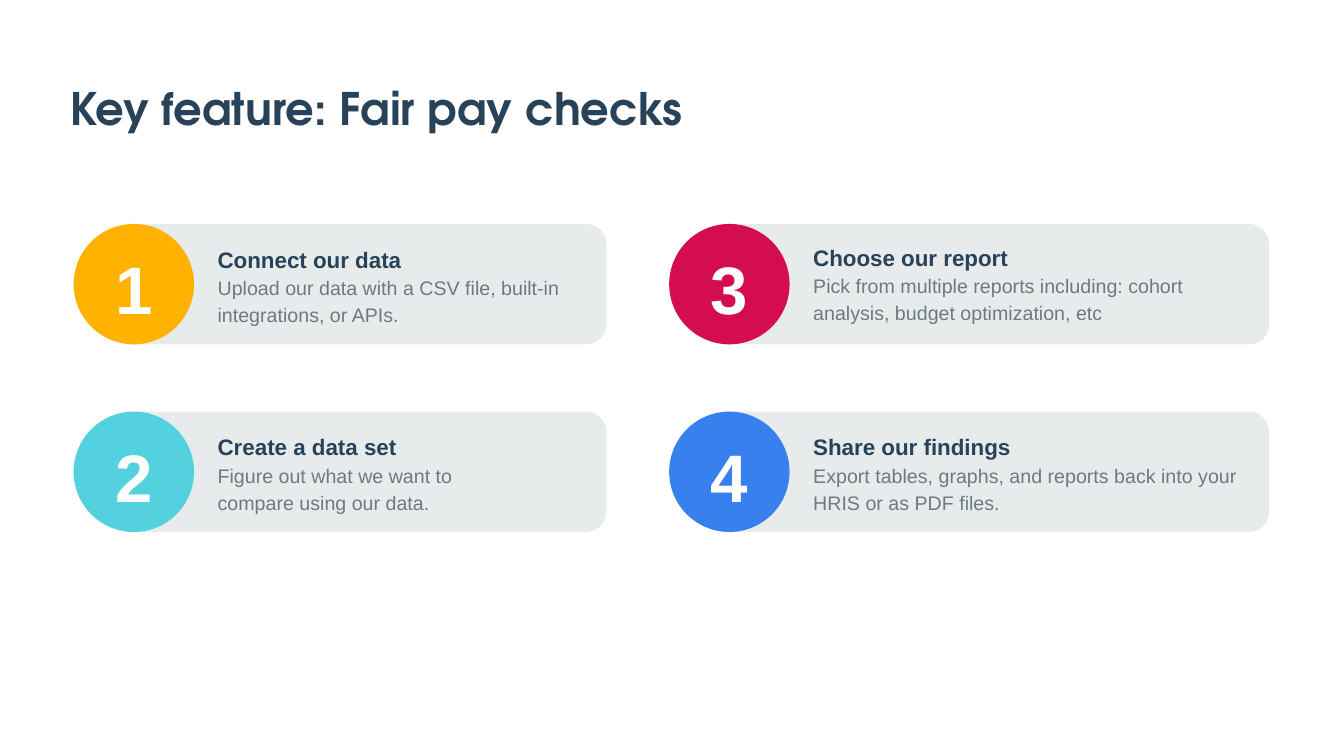
from lxml.etree import SubElement
from pptx import Presentation
from pptx.dml.color import RGBColor
from pptx.enum.shapes import MSO_SHAPE as Shape
from pptx.enum.text import MSO_ANCHOR as Anchor, PP_ALIGN as Align
from pptx.oxml.ns import qn
from pptx.util import Pt

COLORS = {
    "navy": "284359", "slate": "6C7B82", "mist": "D3D8DA", "white": "FFFFFF",
    "amber": "FFB200", "aqua": "53D1DE", "crimson": "D40D50", "blue": "3880EE",
}
CIRCLE = 86
COLUMNS = [(52.6, 353), (478, 401)]
ROWS = [160, 294]
STEPS = [
    ("amber", "Connect our data",
     ["Upload our data with a CSV file, built-in integrations, or APIs."], 0),
    ("aqua", "Create a data set",
     ["Figure out what we want to", "compare using our data."], 0),
    ("crimson", "Choose our report",
     ["Pick from multiple reports including: cohort analysis, budget optimization, etc"], -1.4),
    ("blue", "Share our findings",
     ["Export tables, graphs, and reports back into your HRIS or as PDF files."], 0),
]


class Deck:
    def __init__(self, width, height):
        self.show = Presentation()
        self.show.slide_width, self.show.slide_height = Pt(width), Pt(height)
        self.slide = self.show.slides.add_slide(self.show.slide_layouts[6])

    def style(self, paragraph, size, color, bold=False, face="Arial"):
        font = paragraph.font
        font.name, font.size, font.bold = face, Pt(size), bold
        font.color.rgb = RGBColor.from_string(COLORS[color])

    def shape(self, kind, box, color, alpha=None):
        drawn = self.slide.shapes.add_shape(kind, *map(Pt, box))
        drawn.shadow.inherit = False
        drawn.fill.solid()
        drawn.fill.fore_color.rgb = RGBColor.from_string(COLORS[color])
        drawn.line.fill.background()
        if alpha:
            tint = drawn.fill._xPr.find(qn("a:solidFill"))[0]
            SubElement(tint, qn("a:alpha"), val=str(alpha * 1000))
        return drawn

    def bar(self, box):
        self.shape(Shape.ROUNDED_RECTANGLE, box, "mist", 50).adjustments[0] = 0.167

    def badge(self, left, top, number, color):
        frame = self.shape(Shape.OVAL, (left, top, CIRCLE, CIRCLE), color).text_frame
        frame.margin_left = frame.margin_right = frame.margin_bottom = 0
        frame.margin_top = Pt(5.4)
        frame.vertical_anchor = Anchor.MIDDLE
        label = frame.paragraphs[0]
        label.text, label.alignment = str(number), Align.CENTER
        self.style(label, 48, "white", True)

    def text(self, box, lines, spacing, inset=3.6):
        frame = self.slide.shapes.add_textbox(*map(Pt, box)).text_frame
        frame.word_wrap = True
        frame.vertical_anchor = Anchor.MIDDLE
        frame.margin_top = frame.margin_bottom = Pt(inset)
        for index, (words, *look) in enumerate(lines):
            paragraph = frame.add_paragraph() if index else frame.paragraphs[0]
            paragraph.text, paragraph.line_spacing = words, spacing
            self.style(paragraph, *look)


def main():
    deck = Deck(960, 540)
    deck.text((43.2, 42.5, 773.3, 74.2),
              [("Key feature: Fair pay checks", 32, "navy", True, "TeX Gyre Adventor")], 0.9)
    for index, (color, heading, details, shift) in enumerate(STEPS):
        column, row = divmod(index, len(ROWS))
        (left, bar_width), top = COLUMNS[column], ROWS[row]
        deck.bar((left + 27.6, top, bar_width, CIRCLE))
        lines = [(heading, 16, "navy", True)]
        lines += [(detail, 14, "slate") for detail in details]
        deck.text((left + 95.8, top + shift, bar_width - 70, CIRCLE), lines, 1.15, 7.2)
        deck.badge(left, top, index + 1, color)
    deck.show.save("out.pptx")


if __name__ == "__main__":
    main()
